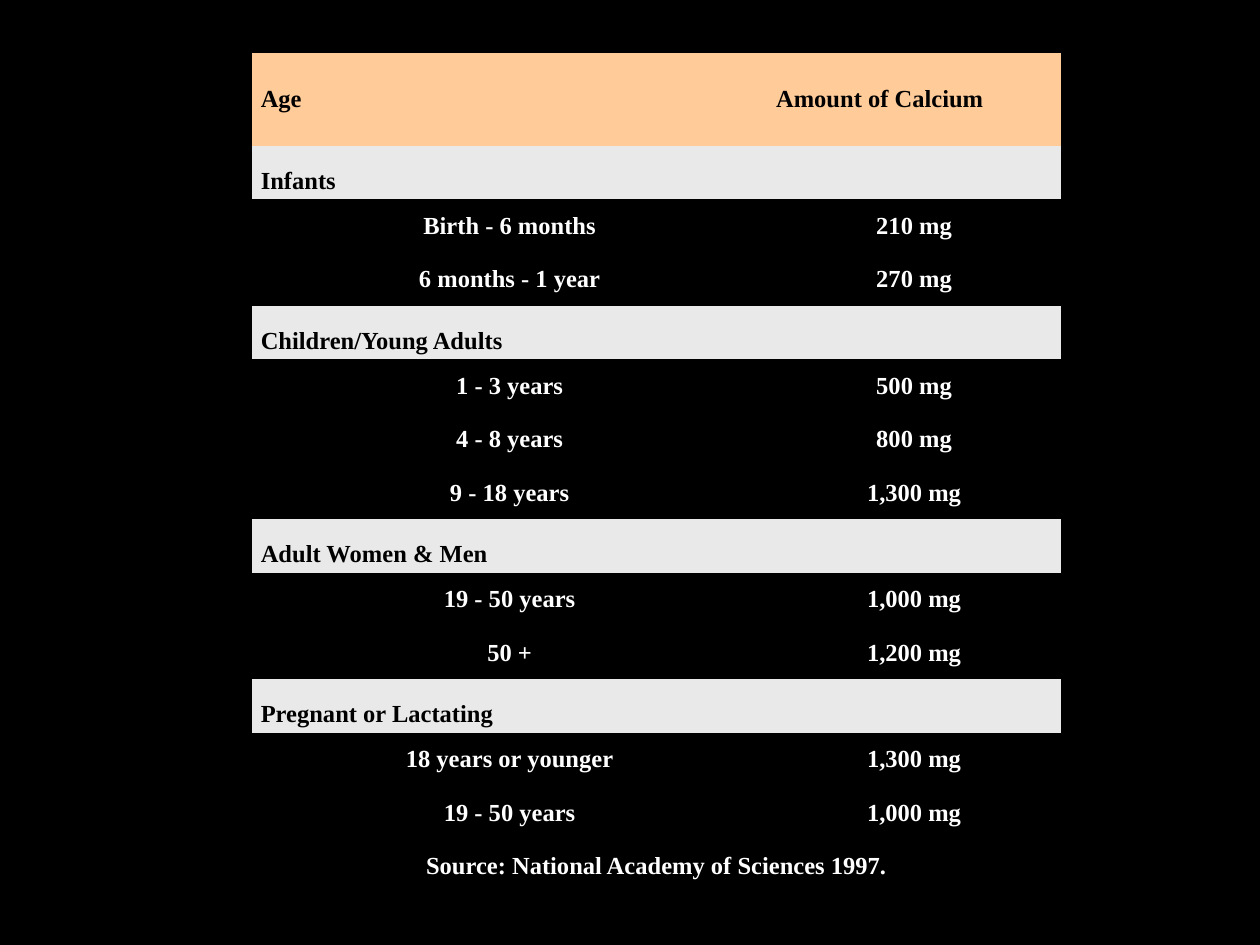
import pptx
import pptx.dml.color
import pptx.enum.text
import pptx.oxml.ns
import pptx.util

Inches = pptx.util.Inches
RGBColor = pptx.dml.color.RGBColor
PP_ALIGN = pptx.enum.text.PP_ALIGN
MSO_ANCHOR = pptx.enum.text.MSO_ANCHOR

BLACK = RGBColor(0x00, 0x00, 0x00)
WHITE = RGBColor(0xFF, 0xFF, 0xFF)
PEACH = RGBColor(0xFF, 0xCC, 0x99)
PALE_GRAY = RGBColor(0xE9, 0xE9, 0xE9)

PLAIN_TABLE_STYLE = "{2D5ABB26-0587-4C30-8999-92F81FD0307C}"
AGE_SHARE = 4.09 / 6.42
HEADER_HEIGHT = Inches(0.74)

HEADINGS = ("Age", "Amount of Calcium")
AGE_GROUPS = {
    "Infants": [("Birth - 6 months", "210 mg"), ("6 months - 1 year", "270 mg")],
    "Children/Young Adults": [
        ("1 - 3 years", "500 mg"),
        ("4 - 8 years", "800 mg"),
        ("9 - 18 years", "1,300 mg"),
    ],
    "Adult Women & Men": [("19 - 50 years", "1,000 mg"), ("50 +", "1,200 mg")],
    "Pregnant or Lactating": [
        ("18 years or younger", "1,300 mg"),
        ("19 - 50 years", "1,000 mg"),
    ],
}
SOURCE = "Source: National Academy of Sciences 1997."

CELL_MARGINS = {
    "margin_left": Inches(0.07),
    "margin_right": Inches(0.07),
    "margin_top": Inches(0.04),
    "margin_bottom": Inches(0.04),
}
FONT = {"name": "Times New Roman", "size": pptx.util.Pt(14), "bold": True}
ROW_FORMATS = {
    "header": (PEACH, BLACK, PP_ALIGN.LEFT, MSO_ANCHOR.MIDDLE),
    "group": (PALE_GRAY, BLACK, PP_ALIGN.LEFT, MSO_ANCHOR.BOTTOM),
    "dose": (None, WHITE, PP_ALIGN.CENTER, MSO_ANCHOR.MIDDLE),
}


def set_attributes(target, values):
    """Set each named attribute of the target."""
    for name, value in values.items():
        setattr(target, name, value)


def calcium_rows():
    """List the rows in order as (format name, texts)."""
    rows = [("header", HEADINGS)]
    for group, doses in AGE_GROUPS.items():
        rows.append(("group", (group,)))
        rows.extend(("dose", dose) for dose in doses)
    rows.append(("dose", (SOURCE,)))
    return rows


def format_cell(cell, text, row_format):
    """Write the text of one cell and give it its row's format."""
    fill_color, text_color, alignment, anchor = ROW_FORMATS[row_format]
    set_attributes(cell, {**CELL_MARGINS, "vertical_anchor": anchor})
    if fill_color is None:
        cell.fill.background()
    else:
        cell.fill.solid()
        cell.fill.fore_color.rgb = fill_color
    paragraph = cell.text_frame.paragraphs[0]
    paragraph.alignment = alignment
    set_attributes(paragraph.font, FONT)
    if text:
        run = paragraph.add_run()
        run.text = text
        set_attributes(run.font, FONT)
        run.font.color.rgb = text_color


def add_calcium_table(slide, left, top, width, height):
    """Place the table of calcium by age in the given box."""
    rows = calcium_rows()
    table = slide.shapes.add_table(len(rows), 2, left, top, width, height).table
    set_attributes(table, {"first_row": False, "horz_banding": False})
    style = table._tbl.tblPr.find(pptx.oxml.ns.qn("a:tableStyleId"))
    style.text = PLAIN_TABLE_STYLE

    age_width = int(width * AGE_SHARE)
    table.columns[0].width = age_width
    table.columns[1].width = width - age_width
    row_height = (height - HEADER_HEIGHT) // (len(rows) - 1)

    for index, (row_format, texts) in enumerate(rows):
        is_header = row_format == "header"
        table.rows[index].height = HEADER_HEIGHT if is_header else row_height
        age_cell, amount_cell = table.cell(index, 0), table.cell(index, 1)
        format_cell(age_cell, texts[0], row_format)
        format_cell(amount_cell, "".join(texts[1:]), row_format)
        if len(texts) == 1:
            age_cell.merge(amount_cell)


def main():
    """Build and save the calcium slide."""
    presentation = pptx.Presentation()
    set_attributes(
        presentation, {"slide_width": Inches(10), "slide_height": Inches(7.5)}
    )
    slide = presentation.slides.add_slide(presentation.slide_layouts[6])
    slide.background.fill.solid()
    slide.background.fill.fore_color.rgb = BLACK
    add_calcium_table(slide, Inches(2), Inches(0.42), Inches(6.42), Inches(6.67))
    presentation.save("out.pptx")


if __name__ == "__main__":
    main()
